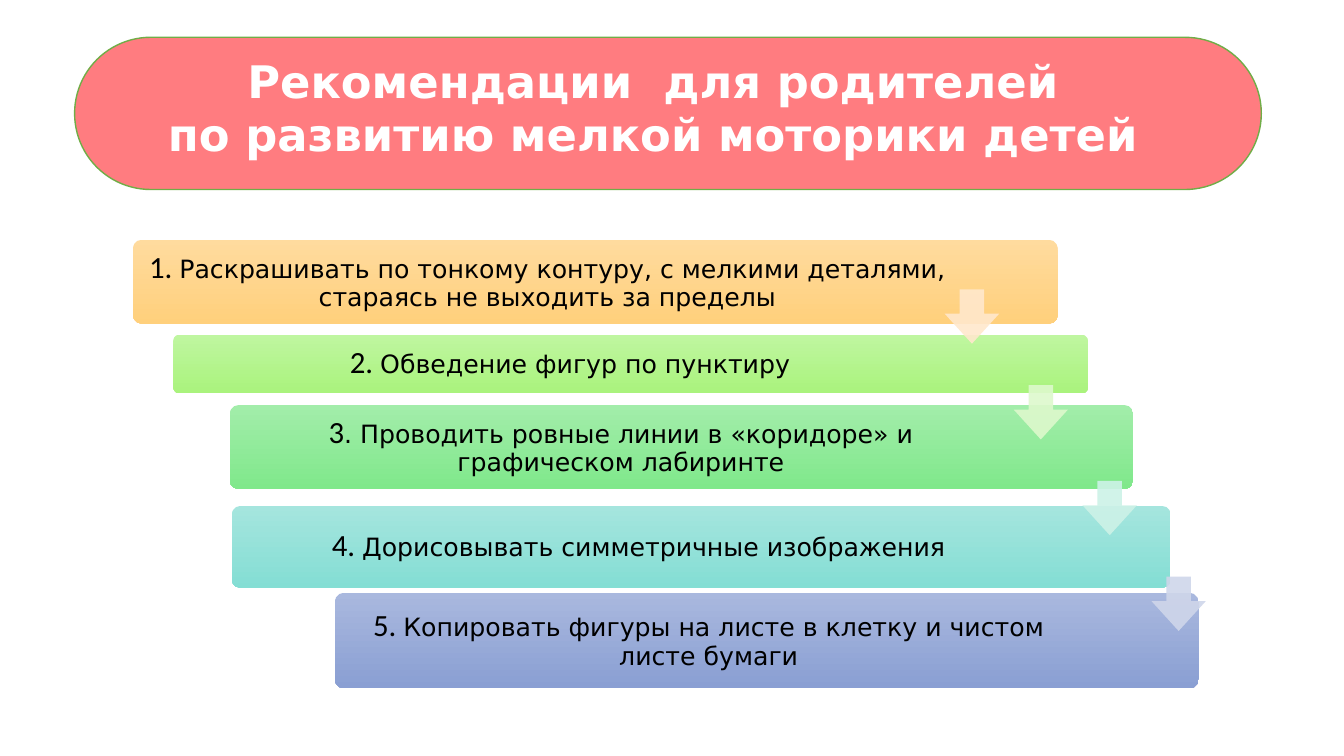
from dataclasses import dataclass

from lxml.etree import SubElement
from pptx import Presentation
from pptx.dml.color import RGBColor
from pptx.enum.shapes import MSO_SHAPE as Shape
from pptx.enum.text import MSO_ANCHOR as Anchor, MSO_AUTO_SIZE as AutoSize, PP_ALIGN as Align
from pptx.oxml.ns import qn
from pptx.util import Inches, Pt

# Content
HEADING = "Рекомендации  для родителей\nпо развитию мелкой моторики детей"

# number, advice, (left, top, width, height), text width, (top colour, bottom colour)
STEPS = [
    ("1. ", "Раскрашивать по тонкому контуру, с мелкими деталями, стараясь не выходить за пределы",
     (1.32, 2.38, 9.17, 0.83), 8.17, ("FFDB9E", "FFD07C")),
    ("2. ", "Обведение фигур по пунктиру",
     (1.72, 3.32, 9.07, 0.58), 7.82, ("BFF6A0", "AAF37D")),
    ("3", ". Проводить ровные линии в «коридоре» и графическом лабиринте",
     (2.28, 4.02, 8.96, 0.83), 7.71, ("A2EDAA", "80E88B")),
    ("4. ", "Дорисовывать симметричные изображения",
     (2.3, 5.02, 9.31, 0.81), 8.02, ("A5E5DE", "84DED4")),
    ("5. ", "Копировать фигуры на листе в клетку и чистом листе бумаги",
     (3.32, 5.88, 8.57, 0.95), 7.37, ("A9B8DE", "8A9FD3")),
]
ARROW_COLORS = ["FFE8CC", "DDF9CC", "CDF2E7", "CFD6EA"]
FIRST_ARROW, LAST_ARROW, ARROW_SIZE = (9.37, 2.87), (11.42, 5.72), 0.54
INSET = 0.09


@dataclass(frozen=True)
class Theme:
    banner: str = "FF7C80"
    banner_line: str = "70AD47"
    heading: str = "FFFFFF"
    text: str = "000000"
    font: str = "DejaVu Sans"
    number_font: str = "Calibri"
    heading_size: int = 32
    number_size: int = 22
    text_size: int = 18
    arrow_opacity: int = 90


THEME = Theme()


def rgb(color):
    return RGBColor.from_string(color)


def style(run, font, size, color, bold=False):
    run.font.name, run.font.size, run.font.bold = font, Pt(size), bold
    run.font.color.rgb = rgb(color)


def add_preset(slide, preset, box, adjustments):
    shape = slide.shapes.add_shape(preset, *map(Inches, box))
    for index, value in enumerate(adjustments):
        shape.adjustments[index] = value
    shape.shadow.inherit = False
    shape.line.fill.background()
    return shape


def add_heading(slide):
    banner = add_preset(slide, Shape.ROUNDED_RECTANGLE, (0.74, 0.37, 11.77, 1.51), [0.5])
    banner.fill.solid()
    banner.fill.fore_color.rgb = rgb(THEME.banner)
    banner.line.color.rgb = rgb(THEME.banner_line)
    banner.line.width = Pt(1)

    title = slide.shapes.title
    banner.element.addnext(title.element)  # the title lies above its banner
    title.left, title.top, title.width, title.height = map(Inches, (1.33, 0.48, 10.3, 1.29))
    frame = title.text_frame
    frame.text = HEADING
    frame.auto_size, frame.vertical_anchor = AutoSize.NONE, Anchor.TOP
    for paragraph in frame.paragraphs:
        paragraph.alignment = Align.CENTER
        style(paragraph.runs[0], THEME.font, THEME.heading_size, THEME.heading, bold=True)


def add_step(slide, number, advice, box, text_width, colors):
    bar = add_preset(slide, Shape.ROUNDED_RECTANGLE, box, [0.1])
    bar.fill.gradient()
    bar.fill.gradient_angle = 270
    for stop, color in zip(bar.fill.gradient_stops, colors):
        stop.color.rgb = rgb(color)

    # The text keeps clear of the arrows at the right end of the bar
    frame = bar.text_frame
    frame.word_wrap, frame.vertical_anchor = True, Anchor.MIDDLE
    frame.margin_left = frame.margin_top = frame.margin_bottom = Inches(INSET)
    frame.margin_right = Inches(box[2] - text_width - 0.05 + INSET)
    paragraph = frame.paragraphs[0]
    paragraph.alignment, paragraph.line_spacing = Align.CENTER, 0.9
    paragraph.text = number
    style(paragraph.runs[0], THEME.number_font, THEME.number_size, THEME.text)
    advice_run = paragraph.add_run()
    advice_run.text = advice
    style(advice_run, THEME.font, THEME.text_size, THEME.text)


def add_arrow(slide, index, color):
    share = index / (len(ARROW_COLORS) - 1)
    left, top = (a + (b - a) * share for a, b in zip(FIRST_ARROW, LAST_ARROW))
    arrow = add_preset(slide, Shape.DOWN_ARROW, (left, top, ARROW_SIZE, ARROW_SIZE), [0.45, 0.55])
    arrow.fill.solid()
    arrow.fill.fore_color.rgb = rgb(color)
    fill_color = arrow.element.spPr.find(qn("a:solidFill"))[0]
    SubElement(fill_color, qn("a:alpha"), val=str(THEME.arrow_opacity * 1000))


def main():
    deck = Presentation()
    deck.slide_width, deck.slide_height = Inches(13.33), Inches(7.5)
    slide = deck.slides.add_slide(deck.slide_layouts[5])

    add_heading(slide)
    for step in STEPS:
        add_step(slide, *step)
    for index, color in enumerate(ARROW_COLORS):
        add_arrow(slide, index, color)

    deck.save("out.pptx")


if __name__ == "__main__":
    main()
